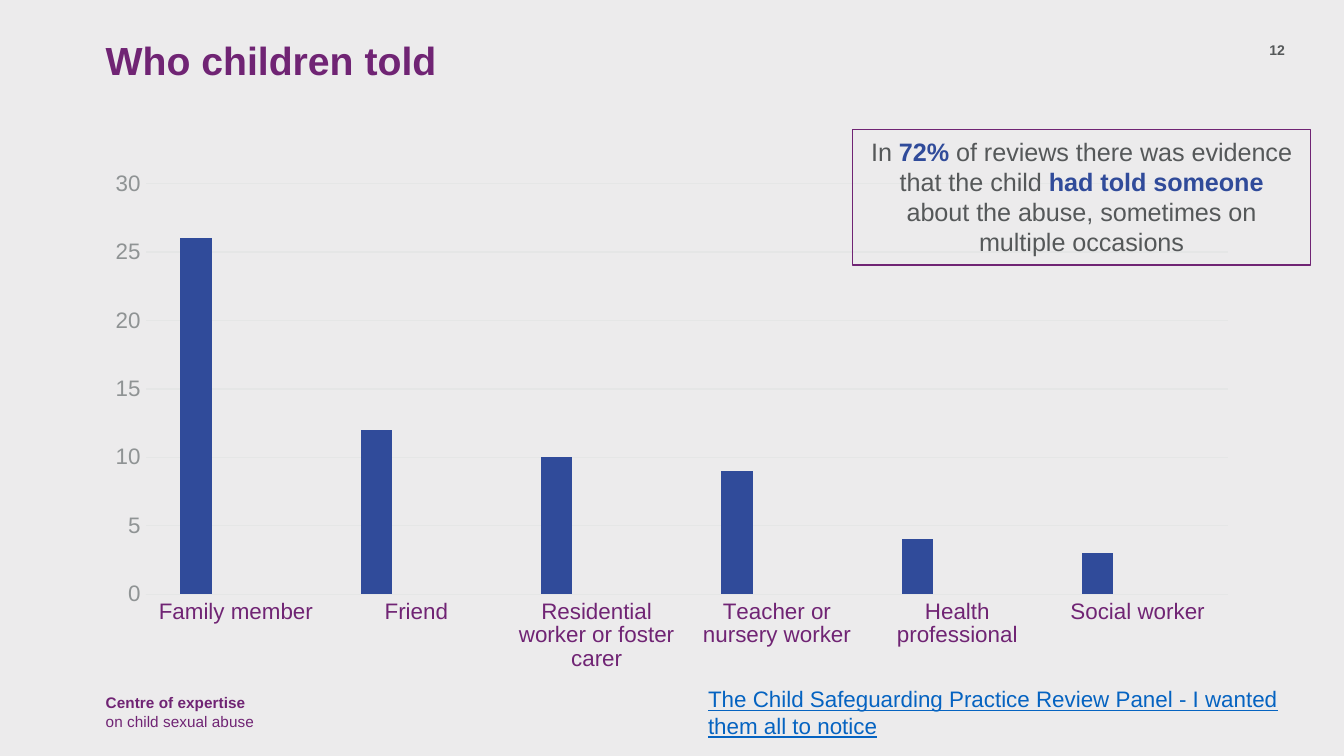
from dataclasses import dataclass

import pptx
import pptx.chart.data
import pptx.dml.color
import pptx.enum.chart
import pptx.enum.shapes
import pptx.enum.text
import pptx.util

RGBColor = pptx.dml.color.RGBColor
Align = pptx.enum.text.PP_ALIGN

BACKGROUND = RGBColor(0xEC, 0xEB, 0xEC)
PURPLE = RGBColor(0x70, 0x24, 0x74)
BLUE = RGBColor(0x30, 0x4B, 0x9A)
GREEN = RGBColor(0x83, 0xBA, 0x26)
LILAC = RGBColor(0xAC, 0x70, 0xAD)
DARK_GREY = RGBColor(0x55, 0x58, 0x59)
MID_GREY = RGBColor(0x8F, 0x93, 0x94)
PALE_GREY = RGBColor(0xE5, 0xE6, 0xE6)
LINK_BLUE = RGBColor(0x05, 0x63, 0xC1)

FONT = "Arial"
COLUMNS = 100
ROWS = 56.25
CELL = pptx.util.Inches(0.1)
LEFT_MARGIN = 6.88
HEADER_ROW = 2.6


@dataclass(frozen=True)
class Area:
    column: float
    row: float
    columns: float
    rows: float

    def lengths(self) -> tuple[int, ...]:
        return tuple(round(cells * CELL) for cells in (self.column, self.row, self.columns, self.rows))


@dataclass(frozen=True)
class Run:
    text: str
    color: RGBColor
    bold: bool = False
    underline: bool = False


@dataclass(frozen=True)
class TextBlock:
    area: Area
    size: float
    lines: tuple[tuple[Run, ...], ...]
    align: Align = Align.LEFT
    line_spacing: float = 1.0
    border: RGBColor | None = None


@dataclass(frozen=True)
class Series:
    name: str
    values: tuple[int | None, ...]
    color: RGBColor


TEXT_BLOCKS = (
    TextBlock(
        Area(LEFT_MARGIN, 51.1, 17.9, 3.8),
        8.25,
        (
            (Run("Centre of expertise", PURPLE, bold=True),),
            (Run("on child sexual abuse", PURPLE),),
        ),
    ),
    TextBlock(
        Area(LEFT_MARGIN, HEADER_ROW, 83.6, 7),
        21,
        ((Run("Who children told", PURPLE, bold=True),),),
        line_spacing=0.9,
    ),
    TextBlock(
        Area(91.5, HEADER_ROW, 5.1, 2.6),
        7.5,
        ((Run("12", DARK_GREY, bold=True),),),
        align=Align.RIGHT,
    ),
    TextBlock(
        Area(63.43, 9.63, 34.1, 10.1),
        13.5,
        (
            (
                Run("In ", DARK_GREY),
                Run("72%", BLUE, bold=True),
                Run(" of reviews there was evidence that the child ", DARK_GREY),
                Run("had told someone ", BLUE, bold=True),
                Run("about the abuse, sometimes on multiple occasions", DARK_GREY),
            ),
        ),
        align=Align.CENTER,
        border=PURPLE,
    ),
    TextBlock(
        Area(51.7, 50.5, 48.3, 5),
        12,
        (
            (
                Run(
                    "The Child Safeguarding Practice Review Panel - I wanted them all to notice",
                    LINK_BLUE,
                    underline=True,
                ),
            ),
        ),
    ),
)

CHART_AREA = Area(LEFT_MARGIN, 12, 86.2, 38.7)
CATEGORIES = (
    "Family member",
    "Friend",
    "Residential worker or foster carer",
    "Teacher or nursery worker",
    "Health professional",
    "Social worker",
)
NO_VALUES = (None,) * len(CATEGORIES)
SERIES = (
    Series("Series 1", (26, 12, 10, 9, 4, 3), BLUE),
    Series("Series 2", NO_VALUES, GREEN),
    Series("Series 3", NO_VALUES, LILAC),
)


def style_font(font: pptx.text.text.Font, size: float, color: RGBColor) -> None:
    font.name = FONT
    font.size = pptx.util.Pt(size)
    font.color.rgb = color


def style_line(line: pptx.dml.line.LineFormat, color: RGBColor) -> None:
    line.color.rgb = color
    line.width = pptx.util.Pt(0.75)


def draw_text(slide: pptx.slide.Slide, block: TextBlock) -> None:
    if block.border is None:
        shape = slide.shapes.add_textbox(*block.area.lengths())
    else:
        shape = slide.shapes.add_shape(pptx.enum.shapes.MSO_SHAPE.RECTANGLE, *block.area.lengths())
        shape.shadow.inherit = False
        shape.fill.background()
        style_line(shape.line, block.border)
    frame = shape.text_frame
    frame.word_wrap = True
    frame.vertical_anchor = pptx.enum.text.MSO_ANCHOR.TOP
    paragraph = frame.paragraphs[0]
    paragraph.alignment = block.align
    paragraph.line_spacing = block.line_spacing
    for index, line in enumerate(block.lines):
        if index:
            paragraph.add_line_break()
        for part in line:
            run = paragraph.add_run()
            run.text = part.text
            style_font(run.font, block.size, part.color)
            run.font.bold = part.bold
            run.font.underline = part.underline


def draw_chart(slide: pptx.slide.Slide, area: Area) -> None:
    data = pptx.chart.data.CategoryChartData()
    data.categories = CATEGORIES
    for series in SERIES:
        data.add_series(series.name, series.values)
    chart = slide.shapes.add_chart(
        pptx.enum.chart.XL_CHART_TYPE.COLUMN_CLUSTERED, *area.lengths(), data
    ).chart
    chart.has_title = False
    chart.has_legend = False
    style_font(chart.font, 10, DARK_GREY)

    plot = chart.plots[0]
    plot.gap_width = 219
    plot.overlap = -27
    plot.vary_by_categories = False
    for drawn, series in zip(plot.series, SERIES):
        drawn.format.fill.solid()
        drawn.format.fill.fore_color.rgb = series.color

    for axis, color in ((chart.category_axis, PURPLE), (chart.value_axis, MID_GREY)):
        axis.major_tick_mark = pptx.enum.chart.XL_TICK_MARK.NONE
        axis.minor_tick_mark = pptx.enum.chart.XL_TICK_MARK.NONE
        style_font(axis.tick_labels.font, 12, color)
    style_line(chart.category_axis.format.line, PALE_GREY)
    value_axis = chart.value_axis
    value_axis.minimum_scale = 0
    value_axis.maximum_scale = 30
    value_axis.major_unit = 5
    value_axis.format.line.fill.background()
    style_line(value_axis.major_gridlines.format.line, PALE_GREY)


def main() -> None:
    presentation = pptx.Presentation()
    presentation.slide_width = round(COLUMNS * CELL)
    presentation.slide_height = round(ROWS * CELL)
    slide = presentation.slides.add_slide(presentation.slide_layouts[6])
    slide.background.fill.solid()
    slide.background.fill.fore_color.rgb = BACKGROUND
    draw_chart(slide, CHART_AREA)
    for block in TEXT_BLOCKS:
        draw_text(slide, block)
    presentation.save("out.pptx")


if __name__ == "__main__":
    main()
